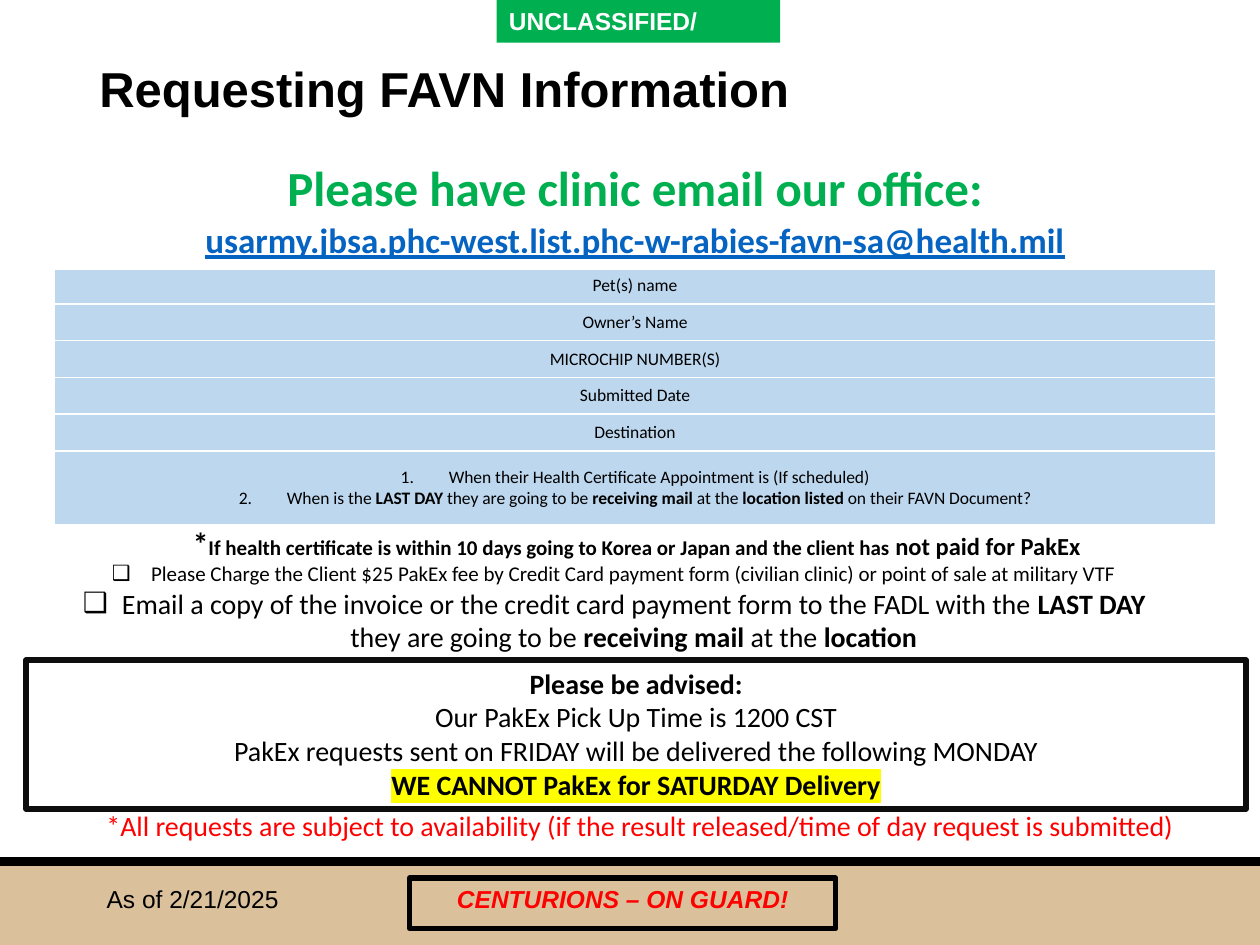
from dataclasses import dataclass

from lxml.etree import SubElement
from pptx import Presentation
from pptx.dml.color import RGBColor
from pptx.enum.shapes import MSO_SHAPE as Shape
from pptx.enum.text import MSO_ANCHOR as Anchor, MSO_AUTO_SIZE as AutoSize, PP_ALIGN as Align
from pptx.oxml.ns import qn
from pptx.util import Cm, Pt


@dataclass(frozen=True)
class Theme:
    head_font: str = "Arial"
    body_font: str = "Calibri"
    black: str = "000000"
    frame: str = "0D0D0D"
    white: str = "FFFFFF"
    green: str = "00B050"
    red: str = "FF0000"
    tan: str = "DAC19B"
    link: str = "0563C1"
    row: str = "BDD7EE"
    marker: str = "FFFF00"
    heading: int = 28
    address: int = 20
    star: int = 18
    body: int = 16
    label: int = 14
    note: int = 12
    cell: int = 10


T = Theme()
rgb = RGBColor.from_string


def add_text(p, text, size=T.body, font=T.body_font, color=T.black, bold=False,
             italic=False, underline=False, highlight=None, align=Align.CENTER):
    """Add text to a paragraph; **marks** switch bold on and off."""
    p.alignment = align
    for i, part in enumerate(text.split("**")):
        if not part:
            continue
        r = p.add_run()
        r.text = part
        f = r.font
        f.name, f.size, f.italic, f.underline = font, Pt(size), italic, underline
        f.bold = bold or i % 2 == 1
        f.color.rgb = rgb(color)
        if highlight:
            mark = SubElement(r._r.get_or_add_rPr(), qn("a:highlight"))
            SubElement(mark, qn("a:srgbClr"), val=highlight)
            r._r.rPr.find(qn("a:solidFill")).addnext(mark)


def set_bullet(p, indent, kind, **attrs):
    p.space_before = Pt(0)
    pPr = p._p.get_or_add_pPr()
    pPr.set("marL", str(Cm(indent)))
    pPr.set("indent", str(-Cm(indent)))
    SubElement(pPr, qn(kind), **attrs)


class SlideBuilder:
    def __init__(self, prs, theme):
        self.theme = theme
        self.slide = prs.slides.add_slide(prs.slide_layouts[1])

    def fill_text(self, tf, paragraphs):
        """Each paragraph is a list of (text, format) pairs."""
        tf.word_wrap = True
        for i, pieces in enumerate(paragraphs):
            p = tf.add_paragraph() if i else tf.paragraphs[0]
            for text, fmt in pieces:
                add_text(p, text, **fmt)

    def place(self, sp, box):
        sp.left, sp.top, sp.width, sp.height = (Cm(v) for v in box)

    def title(self, text, box):
        sp = self.slide.shapes.title
        self.place(sp, box)
        sp.fill.solid()
        sp.fill.fore_color.rgb = rgb(self.theme.white)
        tf = sp.text_frame
        tf.auto_size, tf.vertical_anchor = AutoSize.NONE, Anchor.MIDDLE
        tf.paragraphs[0].line_spacing = 0.9
        self.fill_text(tf, [[(text, dict(size=self.theme.heading, font=self.theme.head_font,
                                         bold=True, align=Align.LEFT))]])

    def bullets(self, box, paragraphs):
        sp = self.slide.placeholders[1]
        self.place(sp, box)
        sp.text_frame.auto_size = AutoSize.NONE
        self.fill_text(sp.text_frame, paragraphs)
        for p in sp.text_frame.paragraphs:
            set_bullet(p, 0.79, "a:buChar", char="❑")

    def rect(self, box, fill=None, line=None, width=1, paragraphs=()):
        sp = self.slide.shapes.add_shape(Shape.RECTANGLE, *(Cm(v) for v in box))
        sp.shadow.inherit = False
        if fill:
            sp.fill.solid()
            sp.fill.fore_color.rgb = rgb(fill)
        else:
            sp.fill.background()
        if line:
            sp.line.color.rgb = rgb(line)
            sp.line.width = Pt(width)
        else:
            sp.line.fill.background()
        sp.text_frame.vertical_anchor = Anchor.TOP
        self.fill_text(sp.text_frame, paragraphs)

    def text(self, box, paragraphs):
        sp = self.slide.shapes.add_textbox(*(Cm(v) for v in box))
        self.fill_text(sp.text_frame, paragraphs)

    def borders(self, cell, bottom):
        tcPr = cell._tc.get_or_add_tcPr()
        for side, width in (("L", 1), ("R", 1), ("T", 1), ("B", bottom)):
            ln = SubElement(tcPr, qn(f"a:ln{side}"), w=str(Pt(width)))
            fill = SubElement(ln, qn("a:solidFill"))
            SubElement(fill, qn("a:srgbClr"), val=self.theme.white)

    def table(self, left, top, width, heights, rows):
        frame = self.slide.shapes.add_table(len(rows), 1, Cm(left), Cm(top),
                                            Cm(width), Cm(sum(heights)))
        table = frame.table
        for i, (height, paragraphs) in enumerate(zip(heights, rows)):
            table.rows[i].height = Cm(height)
            cell = table.cell(i, 0)
            self.borders(cell, bottom=1 if i else 3)
            if i:
                cell.vertical_anchor = Anchor.MIDDLE
                cell.fill.solid()
                cell.fill.fore_color.rgb = rgb(self.theme.row)
            else:
                cell.fill.background()
            self.fill_text(cell.text_frame, paragraphs)
        return table


def main():
    prs = Presentation()
    prs.slide_width, prs.slide_height = Cm(25.4), Cm(19.05)
    s = SlideBuilder(prs, T)
    label = dict(size=T.label, font=T.head_font)

    # Marking, footer band and motto
    s.title("Requesting FAVN Information", (1.75, 0.99, 23.65, 1.73))
    s.rect((10.01, 0, 5.72, 0.86), fill=T.green, paragraphs=[
        [("UNCLASSIFIED/", dict(label, color=T.white, bold=True, align=Align.LEFT))]])
    s.rect((0, 17.42, 25.4, 1.63), fill=T.tan)
    s.rect((0, 17.3, 25.4, 0.13), fill=T.black, line=T.black, width=1.25)
    s.rect((8.26, 17.7, 8.59, 1.02), line=T.black, width=3, paragraphs=[
        [("CENTURIONS – ON GUARD!", dict(label, color=T.red, bold=True, italic=True))]])
    s.text((1.9, 17.7, 5.72, 1.02), [[("As of 2/21/2025", dict(label, align=Align.LEFT))]])

    # Table of details to send
    small = dict(size=T.cell)
    header = [
        [("Please have clinic email our office:",
          dict(size=T.heading, color=T.green, bold=True))],
        [("usarmy.jbsa.phc-west.list.phc-w-rabies-favn-sa@health.mil",
          dict(size=T.address, color=T.link, bold=True, underline=True))],
    ]
    fields = ["Pet(s) name", "Owner’s Name", "MICROCHIP NUMBER(S)",
              "Submitted Date", "Destination"]
    questions = [
        [("When their Health Certificate Appointment is (If scheduled)", small)],
        [("When is the **LAST DAY **they are going to be **receiving mail **at the "
          "**location listed **on their FAVN Document?", small)],
    ]
    rows = [header, *([[(field, small)]] for field in fields), questions]
    table = s.table(1.09, 3.1, 23.42, [2.01] + [0.74] * len(fields) + [1.5], rows)
    for p in table.cell(len(rows) - 1, 0).text_frame.paragraphs:
        set_bullet(p, 0.97, "a:buAutoNum", type="arabicPeriod")

    # Unpaid courier fee
    s.text((1.14, 10.44, 23.39, 1.02), [[
        ("*", dict(size=T.star, bold=True)),
        ("If health certificate is within 10 days going to Korea or Japan "
         "and the client has ", dict(size=T.note, bold=True)),
        ("not paid for PakEx", dict(size=T.label, bold=True))]])
    s.bullets((0.86, 11.18, 23.04, 2.13), [
        [("Please Charge the Client $25 PakEx fee by Credit Card payment form "
          "(civilian clinic) or point of sale at military VTF", dict(size=T.note))],
        [("Email a copy of the invoice or the credit card payment form to the FADL "
          "with the **LAST DAY **they are going to be **receiving mail **at the "
          "**location**", {})],
    ])

    # Delivery advice
    s.rect((0.53, 13.31, 24.59, 3), line=T.frame, width=3.25, paragraphs=[
        [("Please be advised:", dict(bold=True))],
        [("Our PakEx Pick Up Time is 1200 CST", {})],
        [("PakEx requests sent on FRIDAY will be delivered the following MONDAY", {})],
        [("WE CANNOT PakEx for SATURDAY Delivery", dict(bold=True, highlight=T.marker))],
    ])
    s.text((0.99, 16.18, 23.83, 0.94), [
        [("*All requests are subject to availability (if the result released/time of "
          "day request is submitted)", dict(color=T.red))]])

    prs.save("out.pptx")


if __name__ == "__main__":
    main()
